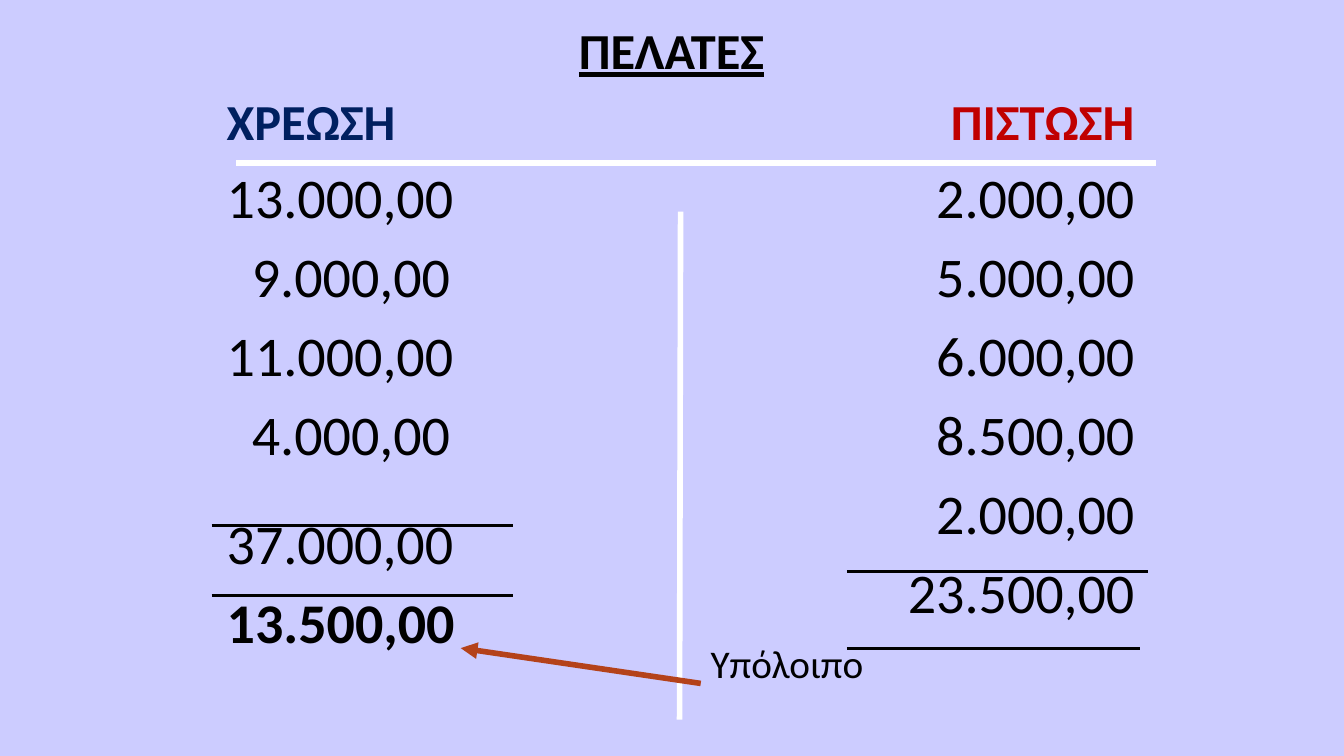
from dataclasses import dataclass

import lxml.etree
import pptx
import pptx.dml.color
import pptx.enum.shapes
import pptx.enum.text
import pptx.oxml
import pptx.oxml.ns
import pptx.util

Inches = pptx.util.Inches
Align = pptx.enum.text.PP_ALIGN
Anchor = pptx.enum.text.MSO_ANCHOR


@dataclass(frozen=True)
class Theme:
    font: str = "Calibri"
    background: str = "CCCCFF"
    text: str = "000000"
    debit: str = "002060"
    credit: str = "C00000"
    axis: str = "FFFFFF"
    arrow: str = "B4421A"
    heading_size: int = 36
    amount_size: int = 40
    note_size: int = 28
    axis_width: int = 4
    rule_width: int = 2


THEME = Theme()


@dataclass(frozen=True)
class Entry:
    text: str
    size: int = THEME.amount_size
    color: str = THEME.text
    bold: bool = False
    underline: bool = False
    align: Align = Align.LEFT
    indent: float = 0.05
    before: float = 7.3


@dataclass(frozen=True)
class Line:
    start: tuple[float, float]
    end: tuple[float, float]
    color: str = THEME.text
    width: int = THEME.rule_width
    arrow: bool = False


SHORT_INDENT = 0.3
TOTAL_GAP = 28.6

TITLE = [Entry("ΠΕΛΑΤΕΣ", THEME.heading_size, bold=True, underline=True,
               align=Align.CENTER, indent=0)]
DEBITS = [
    Entry("ΧΡΕΩΣΗ", THEME.heading_size, THEME.debit, bold=True),
    Entry("13.000,00"),
    Entry("9.000,00", indent=SHORT_INDENT),
    Entry("11.000,00"),
    Entry("4.000,00", indent=SHORT_INDENT),
    Entry("37.000,00", before=TOTAL_GAP),
    Entry("13.500,00", bold=True),
]
CREDIT_AMOUNTS = ["2.000,00", "5.000,00", "6.000,00", "8.500,00", "2.000,00", "23.500,00"]
CREDITS = [
    Entry("ΠΙΣΤΩΣΗ", THEME.heading_size, THEME.credit, bold=True, align=Align.RIGHT),
    *[Entry(amount, align=Align.RIGHT) for amount in CREDIT_AMOUNTS],
    Entry("Υπόλοιπο", THEME.note_size),
]
LINES = [
    Line((6.75, 2.1), (6.74, 7.14), THEME.axis, THEME.axis_width),
    Line((2.34, 1.62), (11.47, 1.62), THEME.axis, THEME.axis_width),
    Line((8.4, 5.67), (11.39, 5.67)),
    Line((8.4, 6.43), (11.31, 6.43)),
    Line((2.1, 5.21), (5.09, 5.21)),
    Line((2.1, 5.91), (5.09, 5.91)),
    Line((6.95, 6.78), (4.57, 6.43), THEME.arrow, THEME.axis_width, arrow=True),
]


def rgb(color: str) -> pptx.dml.color.RGBColor:
    return pptx.dml.color.RGBColor.from_string(color)


def add_text_shadow(run) -> None:
    effects = pptx.oxml.parse_xml(
        f'<a:effectLst {pptx.oxml.ns.nsdecls("a")}>'
        '<a:outerShdw blurRad="38100" dist="38100" dir="2700000">'
        '<a:srgbClr val="000000"><a:alpha val="43000"/></a:srgbClr>'
        '</a:outerShdw></a:effectLst>'
    )
    run.font.fill._xPr.find(pptx.oxml.ns.qn("a:solidFill")).addnext(effects)


def write_text(paragraph, text: str, *, size: float, color: str, bold: bool,
               underline: bool, align: Align, indent: float) -> None:
    properties = paragraph._p.get_or_add_pPr()
    properties.set("marL", str(Inches(indent)))
    properties.set("indent", "0")
    paragraph.alignment = align
    run = paragraph.add_run()
    run.text = text
    run.font.name = THEME.font
    run.font.size = pptx.util.Pt(size)
    run.font.bold = bold
    run.font.underline = underline
    run.font.color.rgb = rgb(color)
    add_text_shadow(run)


def add_entries(slide, entries: list[Entry], left: float, top: float, width: float,
                height: float, *, anchor: Anchor = Anchor.TOP) -> None:
    shape = slide.shapes.add_textbox(*map(Inches, (left, top, width, height)))
    frame = shape.text_frame
    frame.word_wrap = True
    frame.vertical_anchor = anchor
    for index, entry in enumerate(entries):
        paragraph = frame.add_paragraph() if index else frame.paragraphs[0]
        paragraph.line_spacing = 0.9
        paragraph.space_before = pptx.util.Pt(entry.before if index else 0)
        paragraph.space_after = pptx.util.Pt(6 if len(entries) > 1 else 0)
        write_text(paragraph, entry.text, size=entry.size, color=entry.color,
                   bold=entry.bold, underline=entry.underline,
                   align=entry.align, indent=entry.indent)


def add_line(slide, line: Line) -> None:
    connector = slide.shapes.add_connector(
        pptx.enum.shapes.MSO_CONNECTOR.STRAIGHT, *map(Inches, line.start + line.end))
    connector.line.color.rgb = rgb(line.color)
    connector.line.width = pptx.util.Pt(line.width)
    qn = pptx.oxml.ns.qn
    if line.arrow:
        lxml.etree.SubElement(connector.line._get_or_add_ln(), qn("a:tailEnd"), type="triangle")
    lxml.etree.SubElement(connector._element.spPr, qn("a:effectLst"))


def main() -> None:
    presentation = pptx.Presentation()
    presentation.slide_width = Inches(13.33)
    presentation.slide_height = Inches(7.5)
    slide = presentation.slides.add_slide(presentation.slide_layouts[6])
    slide.background.fill.solid()
    slide.background.fill.fore_color.rgb = rgb(THEME.background)
    add_entries(slide, TITLE, 2.41, 0.13, 8.5, 0.79, anchor=Anchor.MIDDLE)
    add_entries(slide, DEBITS, 2.1, 0.91, 4.49, 6.22)
    add_entries(slide, CREDITS, 6.9, 0.91, 4.45, 6.22)
    for line in LINES:
        add_line(slide, line)
    presentation.save("out.pptx")


if __name__ == "__main__":
    main()
